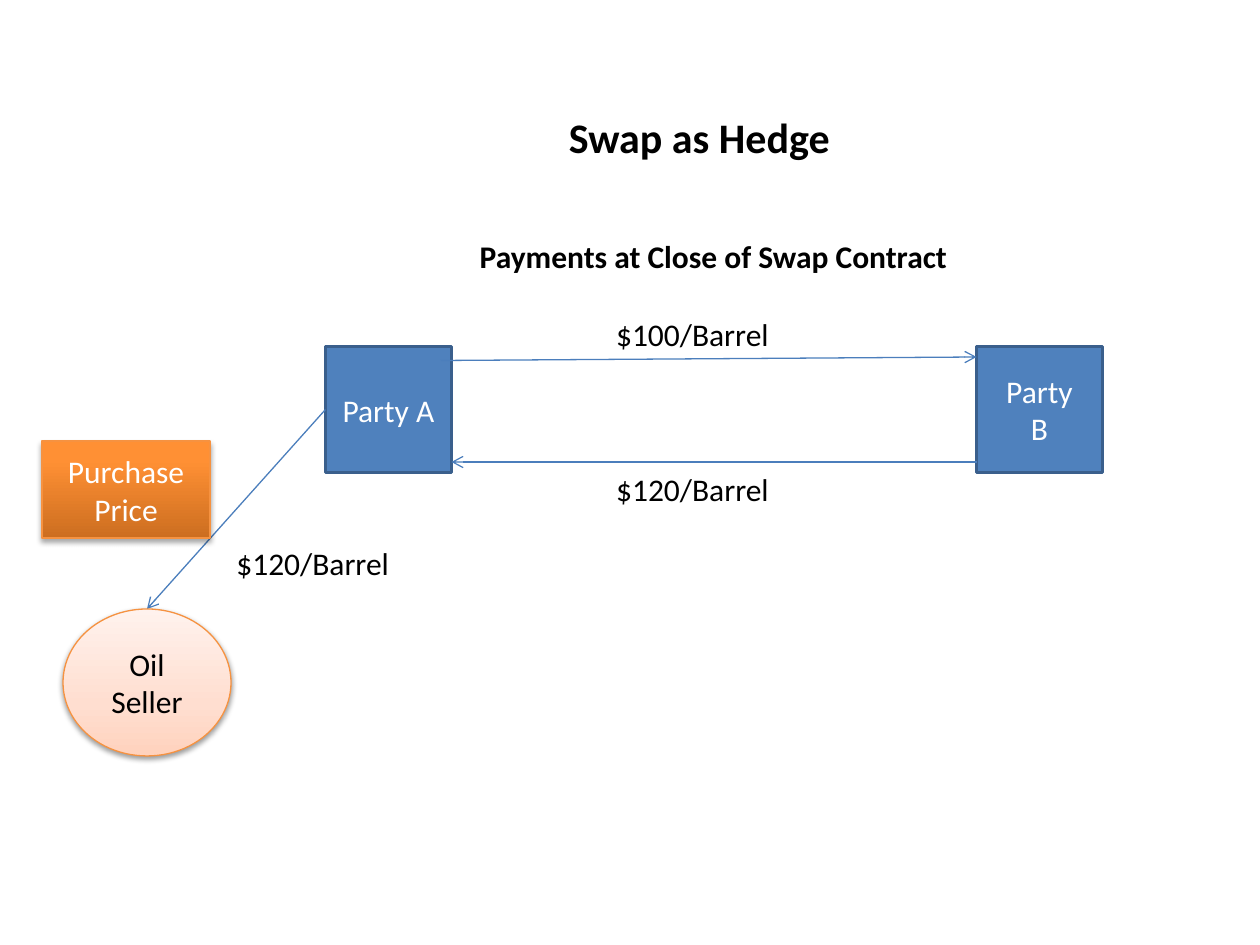
from lxml import etree
from pptx import Presentation
from pptx import util as u
from pptx.dml.color import RGBColor
from pptx.enum import shapes, text
from pptx.oxml import parse_xml
from pptx.oxml.ns import nsdecls, qn

BLUE = RGBColor(0x4F, 0x81, 0xBD)
DARK_BLUE = RGBColor(0x3A, 0x5F, 0x8C)
ARROW_BLUE = RGBColor(0x4B, 0x7E, 0xBC)
ORANGE = RGBColor(0xF6, 0x92, 0x40)
WHITE = RGBColor(0xFF, 0xFF, 0xFF)
BLACK = RGBColor(0x00, 0x00, 0x00)
PEACH_STOPS = [(0, RGBColor(0xFF, 0xD2, 0xBD)), (35, RGBColor(0xFF, 0xDE, 0xD0)),
               (100, RGBColor(0xFF, 0xF2, 0xED))]
ORANGE_STOPS = [(0, RGBColor(0xCC, 0x6E, 0x20)), (80, RGBColor(0xFF, 0x90, 0x34)),
                (100, RGBColor(0xFF, 0x91, 0x36))]


def write(sp, words, color, size=18, bold=False, align=None):
    tf = sp.text_frame
    tf.text = words
    for p in tf.paragraphs:
        p.alignment = align
        for r in p.runs:
            r.font.name = "Calibri"
            r.font.size = u.Pt(size)
            r.font.bold = bold
            r.font.color.rgb = color


def add_node(kind, box, words, color, line, width):
    sp = s.shapes.add_shape(kind, *[u.Pt(v) for v in box])
    sp.shadow.inherit = False
    sp.line.color.rgb = line
    sp.line.width = u.Pt(width)
    sp.text_frame.vertical_anchor = text.MSO_ANCHOR.MIDDLE
    write(sp, words, color, align=text.PP_ALIGN.CENTER)
    return sp


prs = Presentation()
prs.slide_width, prs.slide_height = u.Pt(720), u.Pt(540)
s = prs.slides.add_slide(prs.slide_layouts[6])

parties = []
for x, words in [(186, "Party A"), (558, "Party\nB")]:
    sp = add_node(shapes.MSO_SHAPE.RECTANGLE, (x, 198, 72, 72), words, WHITE, DARK_BLUE, 2)
    sp.fill.solid()
    sp.fill.fore_color.rgb = BLUE
    parties.append(sp)

arrows = []
for ends in [(558, 264, 258, 264), (252, 206, 558, 204), (186, 234, 84, 348)]:
    c = s.shapes.add_connector(shapes.MSO_CONNECTOR.STRAIGHT, *[u.Pt(v) for v in ends])
    c.line.color.rgb = ARROW_BLUE
    c.line.width = u.Pt(0.75)
    etree.SubElement(c.line._get_or_add_ln(), qn("a:tailEnd"), type="arrow")
    etree.SubElement(c._element.spPr, qn("a:effectLst"))
    arrows.append(c)

glossy = []
for kind, box, words, color, stops, alpha, dist in [
    (shapes.MSO_SHAPE.OVAL, (36, 348, 96, 84), "Oil\nSeller", BLACK, PEACH_STOPS, 38, 1.6),
    (shapes.MSO_SHAPE.RECTANGLE, (24, 252, 96, 55.5), "Purchase\nPrice", WHITE, ORANGE_STOPS, 35, 1.8),
]:
    sp = add_node(kind, box, words, color, ORANGE, 0.75)
    sp.fill.gradient()
    sp.fill.gradient_angle = 90
    gs_list = sp._element.spPr.find(qn("a:gradFill")).find(qn("a:gsLst"))
    for gs in list(gs_list):
        gs_list.remove(gs)
    for pos, rgb in stops:
        gs = etree.SubElement(gs_list, qn("a:gs"), pos=str(pos * 1000))
        etree.SubElement(gs, qn("a:srgbClr"), val=str(rgb))
    sp._element.spPr.find(qn("a:effectLst")).append(parse_xml(
        f'<a:outerShdw {nsdecls("a")} blurRad="{u.Pt(3.1)}" dist="{u.Pt(dist)}" dir="5400000" '
        f'rotWithShape="0"><a:srgbClr val="000000"><a:alpha val="{alpha * 1000}"/>'
        '</a:srgbClr></a:outerShdw>'))
    glossy.append(sp)

for sp in glossy:
    lin = sp._element.spPr.find(qn("a:gradFill")).find(qn("a:lin"))
    lin.set("ang", "16200000")

arrows[2].begin_connect(parties[0], 1)
arrows[2].end_connect(glossy[0], 0)

for box, words, size, bold, wrap in [
    ((345, 265, 109, 29), "$120/Barrel", 18, False, True),
    ((128, 307.5, 103, 29), "$120/Barrel", 18, False, False),
    ((345, 176.5, 150, 29), "$100/Barrel", 18, False, True),
    ((318, 60, 165, 36), "Swap as Hedge", 24, True, False),
    ((267, 132, 303, 29), "Payments at Close of Swap Contract", 18, True, True),
]:
    sp = s.shapes.add_textbox(*[u.Pt(v) for v in box])
    sp.text_frame.word_wrap = wrap
    sp.text_frame.auto_size = text.MSO_AUTO_SIZE.SHAPE_TO_FIT_TEXT
    write(sp, words, BLACK, size, bold)

prs.save("out.pptx")
